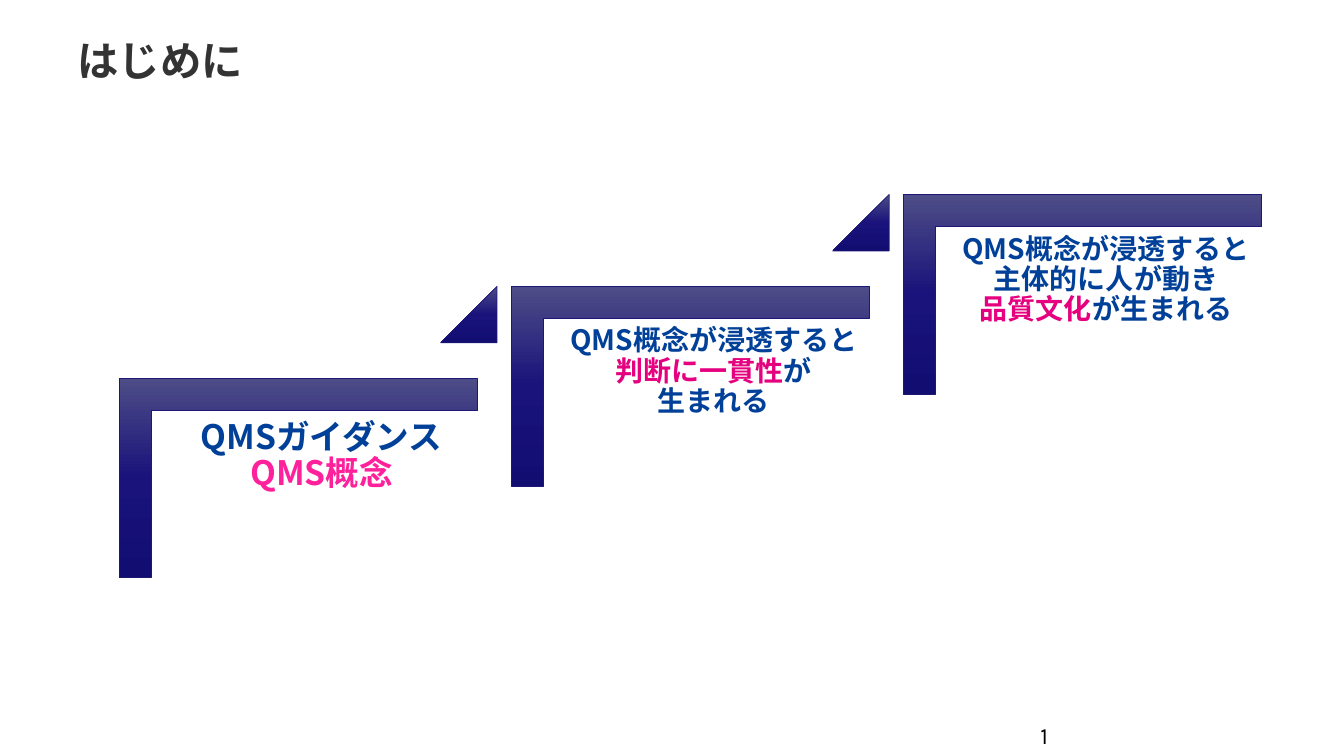
from lxml import etree
from pptx import Presentation
from pptx.dml.color import RGBColor
from pptx.enum.shapes import MSO_SHAPE
from pptx.enum.text import MSO_ANCHOR, PP_ALIGN
from pptx.oxml import parse_xml
from pptx.oxml.ns import nsdecls, qn
from pptx.util import Inches, Pt

CORNER, TRIANGLE = MSO_SHAPE.CORNER, MSO_SHAPE.ISOSCELES_TRIANGLE
TOP = MSO_ANCHOR.TOP
LEFT, CENTER = PP_ALIGN.LEFT, PP_ALIGN.CENTER
JAPANESE, LATIN = "Noto Sans CJK JP", "Karla"
BLUE, MAGENTA, PINK = "004098", "E4007E", "FF219B"
GRADIENT = ((0, "4E4D87"), (50, "19137B"), (100, "120D71"))

# Staircase: first step's place, size of a bracket, shift to the next step
STEP_LEFT, STEP_TOP = 1.18, 3.75
STEP_W, STEP_H = 3.55, 1.98
SHIFT_X, RISE = 3.89, 0.91
STEPS = [
    (24, 0.1, [("QMSガイダンス\v", BLUE), ("QMS概念", PINK)]),
    (20, 0.08, [("QMS概念が浸透すると\v", BLUE), ("判断に一貫性", MAGENTA),
                ("が\v生まれる", BLUE)]),
    (20, 0.08, [("QMS概念が浸透すると\v主体的に人が動き\v", BLUE),
                ("品質文化", MAGENTA), ("が生まれる", BLUE)]),
]


def color(hex_value):
    return RGBColor.from_string(hex_value)


def place(shape, left, top, width, height):
    shape.left, shape.top = Inches(left), Inches(top)
    shape.width, shape.height = Inches(width), Inches(height)


def write(frame, runs, size, font_name, align=LEFT, bold=False, inset=None):
    """Fill a text frame with one paragraph of (text, colour) runs."""
    frame.word_wrap = True
    frame.vertical_anchor = TOP
    if inset is not None:
        frame.margin_left = frame.margin_right = Inches(inset)
        frame.margin_top = frame.margin_bottom = Inches(inset)
    paragraph = frame.paragraphs[0]
    paragraph.alignment = align
    font = paragraph.font
    font.size, font.bold, font.name = Pt(size), bold, font_name
    # East Asian glyphs need their own typeface entry
    defaults = paragraph._p.pPr.find(qn("a:defRPr"))
    etree.SubElement(defaults, qn("a:ea")).set("typeface", font_name)
    for text, hex_value in runs:
        for index, piece in enumerate(text.split("\v")):
            if index:
                paragraph.add_line_break()
            if piece:
                run = paragraph.add_run()
                run.text = piece
                run.font.color.rgb = color(hex_value)
    return paragraph


def shade(shape):
    """Vertical gradient that stays upright when the shape is turned."""
    shape.shadow.inherit = False
    shape.line.color.rgb = color("1D1876")
    shape.line.width = Pt(0.5)
    stops = "".join(
        f'<a:gs pos="{share * 1000}"><a:srgbClr val="{hex_value}"/></a:gs>'
        for share, hex_value in GRADIENT)
    gradient = parse_xml(
        f'<a:gradFill {nsdecls("a")} rotWithShape="0"><a:gsLst>{stops}</a:gsLst>'
        '<a:lin ang="5400000" scaled="0"/></a:gradFill>')
    shape._element.spPr.find(qn("a:prstGeom")).addnext(gradient)


def add_step(slide, left, top, size, inset, runs):
    # The bracket is a turned corner, so its unturned box swaps the sides
    turn = (STEP_W - STEP_H) / 2
    bracket = slide.shapes.add_shape(
        CORNER, Inches(left + turn), Inches(top - turn),
        Inches(STEP_H), Inches(STEP_W))
    bracket.rotation = 90
    bracket.adjustments[0] = bracket.adjustments[1] = 0.16
    shade(bracket)
    label = slide.shapes.add_textbox(
        Inches(left + 0.41), Inches(top + 0.32), Inches(3.2), Inches(2.61))
    paragraph = write(label.text_frame, runs, size, JAPANESE, CENTER, True, inset)
    paragraph.line_spacing = 0.9


def add_rise_marker(slide, left, top):
    marker = slide.shapes.add_shape(
        TRIANGLE, Inches(left + 3.19), Inches(top - RISE),
        Inches(0.56), Inches(0.56))
    marker.adjustments[0] = 1
    shade(marker)


def add_staircase(slide, left, top):
    for index, (size, inset, runs) in enumerate(STEPS):
        step_left, step_top = left + index * SHIFT_X, top - index * RISE
        add_step(slide, step_left, step_top, size, inset, runs)
        if index < len(STEPS) - 1:
            add_rise_marker(slide, step_left, step_top)


def add_heading(slide):
    title = slide.shapes.title
    place(title, 0.67, 0.3, 12, 1.25)
    write(title.text_frame, [("はじめに", "333333")], 29.5, JAPANESE, bold=True)


def add_page_number(slide):
    number = slide.shapes.add_textbox(
        Inches(10.22), Inches(7.11), Inches(3.11), Inches(0.52))
    write(number.text_frame, [("1", "000000")], 16.6, LATIN)


def main():
    deck = Presentation()
    deck.slide_width, deck.slide_height = Inches(13.33), Inches(7.5)
    slide = deck.slides.add_slide(deck.slide_layouts[5])
    add_heading(slide)
    add_page_number(slide)
    add_staircase(slide, STEP_LEFT, STEP_TOP)
    deck.save("out.pptx")


if __name__ == "__main__":
    main()
